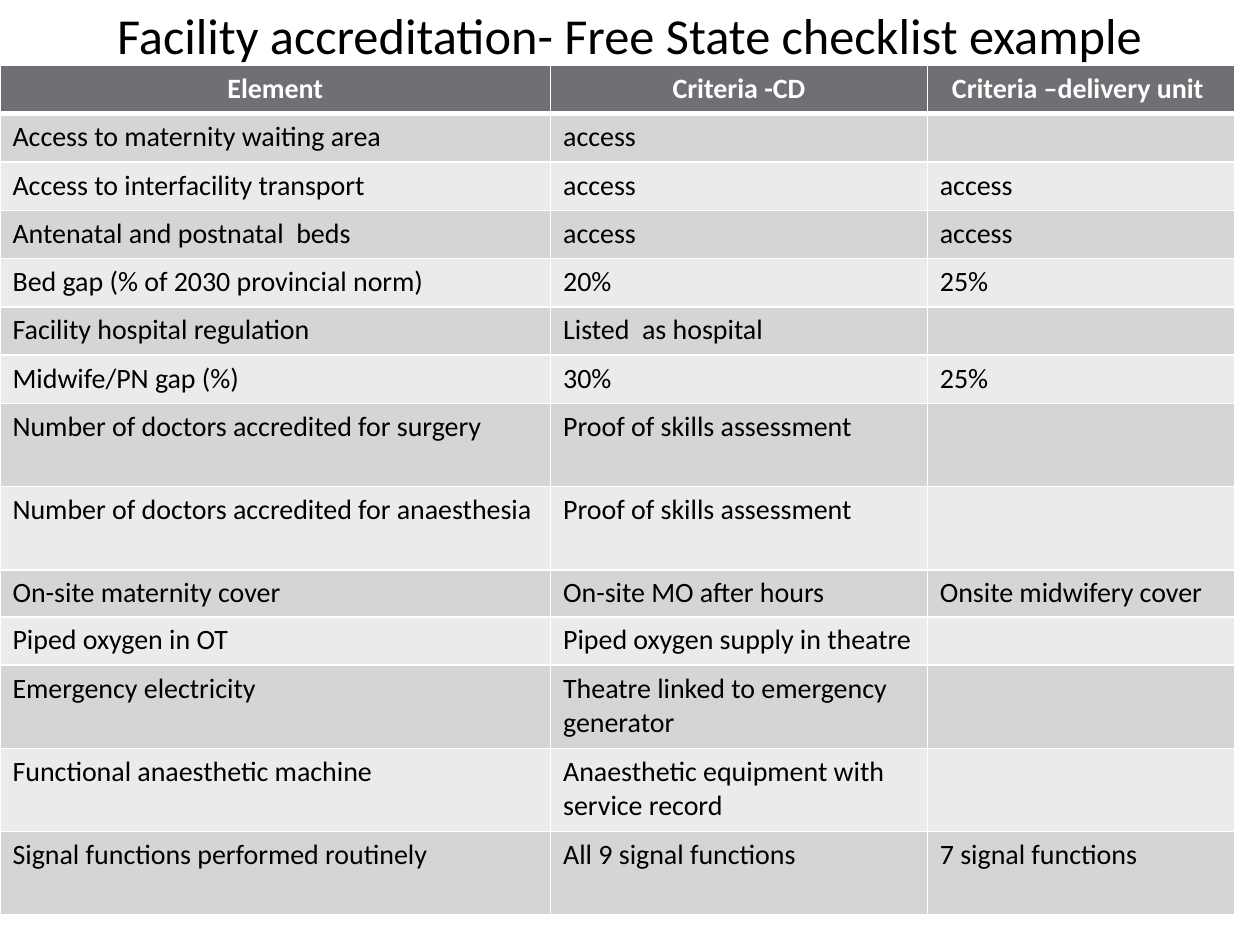
from dataclasses import dataclass

from lxml.etree import SubElement
from pptx import Presentation
from pptx.dml.color import RGBColor as Rgb
from pptx.enum.text import MSO_ANCHOR as Anchor, PP_ALIGN as Align
from pptx.oxml.ns import qn
from pptx.util import Inches, Pt


@dataclass(frozen=True)
class Theme:
    """Colours, font and type sizes of the slide."""
    font: str = "Calibri"
    title_size: float = 28.8
    table_size: float = 16
    ink: str = "000000"
    paper: str = "FFFFFF"
    header: str = "6F6F74"
    bands: tuple = ("D5D5D6", "EBEBEB")
    rule: float = 1
    header_rule: float = 3


THEME = Theme()
TITLE = "Facility accreditation- Free State checklist example"
HEADINGS = ("Element", "Criteria -CD", "Criteria –delivery unit ")
SINGLE, COMPACT, DOUBLE = Pt(27.6), Pt(26.6), Pt(47.6)
CHECKLIST = (
    (SINGLE, "Access to maternity waiting area", "access", ""),
    (SINGLE, "Access to interfacility transport", "access", "access"),
    (SINGLE, "Antenatal and postnatal  beds", "access", "access"),
    (SINGLE, "Bed gap (% of 2030 provincial norm)", "20%", "25%"),
    (SINGLE, "Facility hospital regulation", "Listed  as hospital", ""),
    (SINGLE, "Midwife/PN gap (%)", "30%", "25%"),
    (DOUBLE, "Number of doctors accredited for surgery", "Proof of skills assessment", ""),
    (DOUBLE, "Number of doctors accredited for anaesthesia", "Proof of skills assessment", ""),
    (COMPACT, "On-site maternity cover", "On-site MO after hours", "Onsite midwifery cover"),
    (SINGLE, "Piped oxygen in OT", "Piped oxygen supply in theatre", ""),
    (DOUBLE, "Emergency electricity", "Theatre linked to emergency generator", ""),
    (DOUBLE, "Functional anaesthetic machine", "Anaesthetic equipment with service record", ""),
    (DOUBLE, "Signal functions performed routinely", "All 9 signal functions", "7 signal functions"),
)


def write_run(paragraph, text, size, colour, bold=False):
    """Add one formatted run to a paragraph."""
    run = paragraph.add_run()
    run.text = text
    run.font.name, run.font.size, run.font.bold = THEME.font, Pt(size), bold
    run.font.color.rgb = Rgb.from_string(colour)


def draw_borders(cell, bottom_width):
    """Rule all four sides of a cell in the paper colour."""
    properties = cell._tc.get_or_add_tcPr()
    widths = {"L": THEME.rule, "R": THEME.rule, "T": THEME.rule, "B": bottom_width}
    for side, width in widths.items():
        line = SubElement(properties, qn(f"a:ln{side}"), w=str(Pt(width)))
        fill = SubElement(line, qn("a:solidFill"))
        SubElement(fill, qn("a:srgbClr"), val=THEME.paper)


def fill_cell(cell, text, background, is_header):
    """Format one checklist cell and write its text."""
    draw_borders(cell, THEME.header_rule if is_header else THEME.rule)
    cell.fill.solid()
    cell.fill.fore_color.rgb = Rgb.from_string(background)
    paragraph = cell.text_frame.paragraphs[0]
    paragraph.alignment = Align.CENTER if is_header else Align.LEFT
    if text:
        write_run(paragraph, text, THEME.table_size,
                  THEME.paper if is_header else THEME.ink, is_header)
    else:
        SubElement(paragraph._p, qn("a:endParaRPr"), sz=str(THEME.table_size * 100))


def place_title(slide, box):
    """Move the title placeholder into its box and write the title."""
    title = slide.shapes.title
    title.left, title.top, title.width, title.height = box
    title.text_frame.vertical_anchor = Anchor.MIDDLE
    title.text_frame.word_wrap = True
    paragraph = title.text_frame.paragraphs[0]
    paragraph.alignment = Align.CENTER
    write_run(paragraph, TITLE, THEME.title_size, THEME.ink)


def place_checklist(slide, box, column_shares):
    """Build the accreditation table in its box."""
    rows = ((SINGLE, *HEADINGS),) + CHECKLIST
    table = slide.shapes.add_table(len(rows), len(HEADINGS), *box).table
    for column, share in zip(table.columns, column_shares):
        column.width = int(box[2] * share / sum(column_shares))
    for index, (height, *texts) in enumerate(rows):
        table.rows[index].height = height
        background = THEME.bands[(index - 1) % 2] if index else THEME.header
        for cell, text in zip(table.rows[index].cells, texts):
            fill_cell(cell, text, background, index == 0)


def main():
    """Build and save the slide."""
    deck = Presentation()
    deck.slide_width, deck.slide_height = Inches(10), Inches(7.5)
    slide = deck.slides.add_slide(deck.slide_layouts[5])
    place_title(slide, [Inches(n) for n in (0.5, -0.05, 9, 0.65)])
    place_checklist(slide, [Inches(n) for n in (0, 0.52, 9.8, 6.75)], (4.37, 2.99, 2.44))
    deck.save("out.pptx")


if __name__ == "__main__":
    main()
